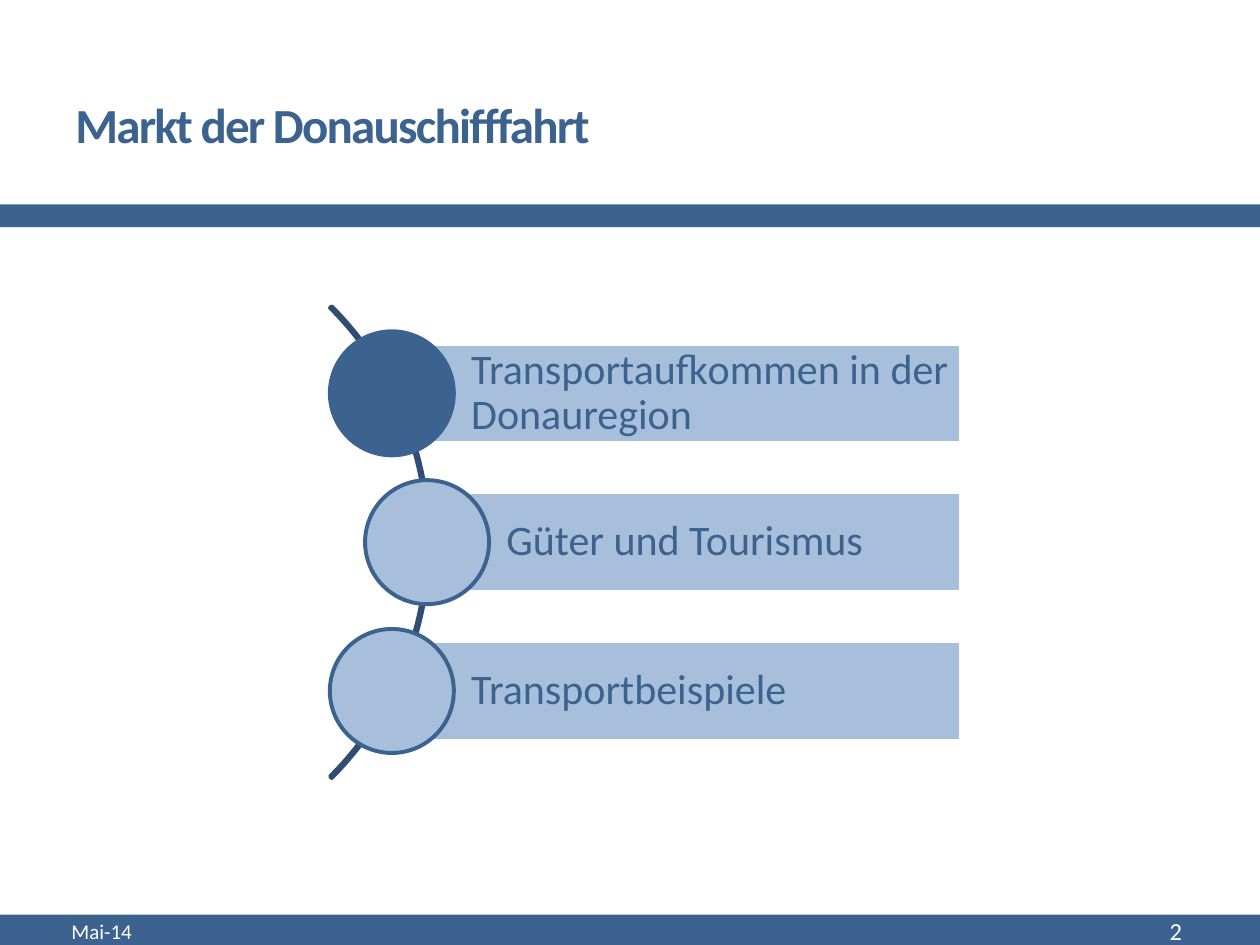
import pptx
import pptx.dml.color
import pptx.enum.shapes
import pptx.enum.text
import pptx.util

Cm, Pt = pptx.util.Cm, pptx.util.Pt
SHAPE = pptx.enum.shapes.MSO_SHAPE
ALIGN = pptx.enum.text.PP_ALIGN
BLUE, DARK, LIGHT, WHITE = "3C628F", "304E73", "A8BFDB", "FFFFFF"

CENTRE_Y = 10.93
STEP = 3
BAR_RIGHT = 19.37
BAR_HEIGHT = 2
CIRCLE = 2.5
ARC = 13.46
TOPICS = [
    ("Transportaufkommen in der Donauregion", 7.9, BLUE),
    ("Güter und Tourismus", 8.61, LIGHT),
    ("Transportbeispiele", 7.9, LIGHT),
]


def colour(value):
    return pptx.dml.color.RGBColor.from_string(value)


def add_shape(page, kind, left, top, width, height, fill=None, line=None, weight=2.08):
    shape = page.shapes.add_shape(kind, Cm(left), Cm(top), Cm(width), Cm(height))
    shape.shadow.inherit = False
    if fill:
        shape.fill.solid()
        shape.fill.fore_color.rgb = colour(fill)
    else:
        shape.fill.background()
    if line:
        shape.line.color.rgb = colour(line)
        shape.line.width = Pt(weight)
    else:
        shape.line.fill.background()
    return shape


def write(box, text, size, value, bold=False, align=ALIGN.LEFT):
    frame = box.text_frame
    frame.word_wrap = True
    frame.vertical_anchor = pptx.enum.text.MSO_ANCHOR.MIDDLE
    para = frame.paragraphs[0]
    para.alignment = align
    span = para.add_run()
    span.text = text
    span.font.name = "Calibri"
    span.font.size = Pt(size)
    span.font.bold = bold
    span.font.color.rgb = colour(value)
    return para


def add_text(page, left, top, width, height, text, size, value, **style):
    box = page.shapes.add_textbox(Cm(left), Cm(top), Cm(width), Cm(height))
    return write(box, text, size, value, **style)


def add_topic(page, text, left, centre, fill):
    bar = add_shape(page, SHAPE.RECTANGLE, left, centre - BAR_HEIGHT / 2,
                    BAR_RIGHT - left, BAR_HEIGHT, LIGHT, WHITE)
    para = write(bar, text, 24, BLUE)
    para.line_spacing = 0.9
    frame = bar.text_frame
    frame.margin_left = Cm(1.6)
    frame.margin_top = frame.margin_right = frame.margin_bottom = Cm(0.18)
    # The circle is centred on the left edge of its bar
    add_shape(page, SHAPE.OVAL, left - CIRCLE / 2, centre - CIRCLE / 2,
              CIRCLE, CIRCLE, fill, BLUE, 2.25)


def main():
    deck = pptx.Presentation()
    deck.slide_width, deck.slide_height = Cm(25.4), Cm(19.05)
    page = deck.slides.add_slide(deck.slide_layouts[6])

    # Footer and header bands
    add_shape(page, SHAPE.RECTANGLE, -0.1, 18.44, 25.8, 1.27, BLUE)
    add_shape(page, SHAPE.RECTANGLE, 0, 4.12, 25.7, 0.46, BLUE)

    # Title with tightened letter spacing
    title = add_text(page, 1.27, 1.12, 22.86, 2.74,
                     "Markt der Donauschifffahrt", 28, BLUE, bold=True)
    title.runs[0].font._element.set("spc", "-100")

    # Arc behind the topics, from -45 to 45 degrees
    arc = add_shape(page, SHAPE.BLOCK_ARC, -4.8, CENTRE_Y - ARC / 2, ARC, ARC, line=DARK)
    for index, value in enumerate((189, 27, 0.004)):
        arc.adjustments[index] = value

    # Topics
    for index, (text, left, fill) in enumerate(TOPICS):
        add_topic(page, text, left, CENTRE_Y + (index - 1) * STEP, fill)

    # Date and page number
    add_text(page, 1.19, 18.31, 8.05, 0.91, "Mai-14", 12, WHITE)
    add_text(page, 21.11, 18.31, 2.97, 0.91, "2", 14, WHITE, align=ALIGN.RIGHT)

    deck.save("out.pptx")


if __name__ == "__main__":
    main()
